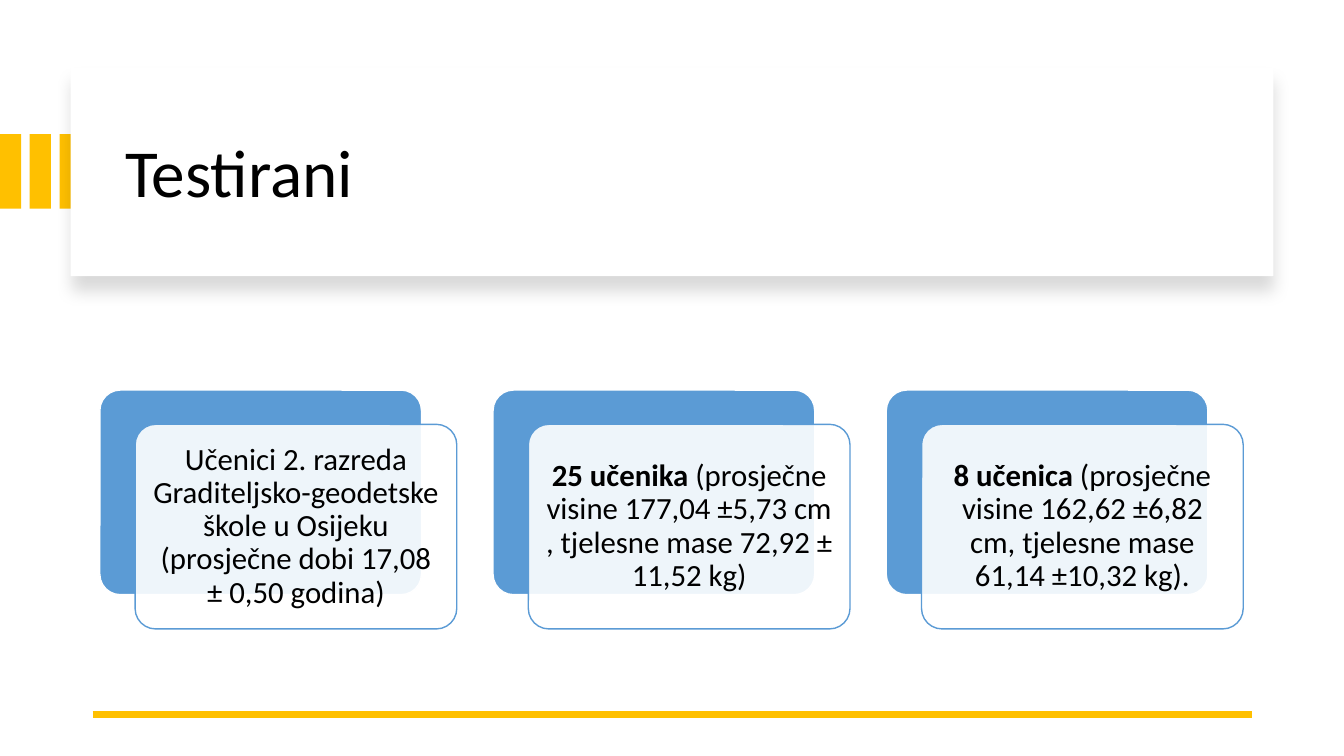
from lxml import etree
from pptx import Presentation
from pptx.dml.color import RGBColor
from pptx.enum import shapes, text
from pptx.oxml import ns, parse_xml
from pptx.util import Inches, Pt

GOLD = RGBColor(0xFF, 0xC0, 0x00)
BLUE = RGBColor(0x5B, 0x9B, 0xD5)
WHITE = RGBColor(0xFF, 0xFF, 0xFF)
BLACK = RGBColor(0x00, 0x00, 0x00)
FONT = "Calibri"

# Each card: bold lead, remaining wording
CARDS = [
    ("", "Učenici 2. razreda Graditeljsko-geodetske škole u Osijeku "
         "(prosječne dobi 17,08 ± 0,50 godina)"),
    ("25 učenika ", "(prosječne visine 177,04 ±5,73 cm , "
                    "tjelesne mase 72,92 ± 11,52 kg)"),
    ("8 učenica ", "(prosječne visine 162,62 ±6,82 cm, "
                   "tjelesne mase 61,14 ±10,32 kg)."),
]
CARD_LEFT, CARD_TOP, CARD_STEP = 0.99, 3.87, 3.9
CARD_WIDTH, CARD_HEIGHT = 3.19, 2.03
CARD_OFFSET_X, CARD_OFFSET_Y = 0.35, 0.34

SHADOW = (
    f'<a:effectLst {ns.nsdecls("a")}>'
    '<a:outerShdw blurRad="139700" dist="127000" dir="5400000" algn="t" rotWithShape="0">'
    '<a:srgbClr val="000000"><a:alpha val="15000"/></a:srgbClr>'
    '</a:outerShdw></a:effectLst>'
)


def add_box(slide, kind, left, top, width, height, fill, line=None):
    shape = slide.shapes.add_shape(
        kind, Inches(left), Inches(top), Inches(width), Inches(height))
    shape.shadow.inherit = False
    shape.fill.solid()
    shape.fill.fore_color.rgb = fill
    if line is None:
        shape.line.fill.background()
    else:
        shape.line.color.rgb = line
        shape.line.width = Pt(1)
    return shape


def add_card_layer(slide, left, top, fill, line):
    shape = add_box(slide, shapes.MSO_SHAPE.ROUNDED_RECTANGLE,
                    left, top, CARD_WIDTH, CARD_HEIGHT, fill, line)
    shape.adjustments[0] = 0.1
    return shape


def set_opacity(shape, percent):
    color = shape.fill._xPr.find(".//" + ns.qn("a:srgbClr"))
    etree.SubElement(color, ns.qn("a:alpha")).set("val", str(percent * 1000))


def format_paragraph(paragraph, size, alignment):
    paragraph.alignment = alignment
    paragraph.line_spacing = 0.9
    paragraph.font.name = FONT
    paragraph.font.size = Pt(size)
    paragraph.font.color.rgb = BLACK


def add_card(slide, left, lead, wording):
    add_card_layer(slide, left, CARD_TOP, BLUE, WHITE)
    front = add_card_layer(slide, left + CARD_OFFSET_X, CARD_TOP + CARD_OFFSET_Y,
                           WHITE, BLUE)
    set_opacity(front, 90)
    frame = front.text_frame
    frame.word_wrap = True
    frame.vertical_anchor = text.MSO_ANCHOR.MIDDLE
    frame.margin_left = frame.margin_right = Inches(0.09)
    frame.margin_top = frame.margin_bottom = Inches(0.09)
    paragraph = frame.paragraphs[0]
    format_paragraph(paragraph, 22, text.PP_ALIGN.CENTER)
    if lead:
        run = paragraph.add_run()
        run.text = lead
        run.font.bold = True
    paragraph.add_run().text = wording


def add_title(slide, wording):
    title = slide.shapes.title
    title.left, title.top = Inches(1.14), Inches(0.89)
    title.width, title.height = Inches(11.13), Inches(1.7)
    title.text_frame.text = wording
    title.text_frame.vertical_anchor = text.MSO_ANCHOR.MIDDLE
    format_paragraph(title.text_frame.paragraphs[0], 48, text.PP_ALIGN.LEFT)
    # Bring the title in front of its panel
    slide.shapes._spTree.append(title._element)


def add_rule(slide, left, right, y):
    rule = slide.shapes.add_connector(
        shapes.MSO_CONNECTOR.STRAIGHT, Inches(left), Inches(y), Inches(right), Inches(y))
    rule.line.color.rgb = GOLD
    rule.line.width = Pt(4.5)
    etree.SubElement(rule._element.spPr, ns.qn("a:effectLst"))


def main():
    presentation = Presentation()
    presentation.slide_width, presentation.slide_height = Inches(13.33), Inches(7.5)
    slide = presentation.slides.add_slide(presentation.slide_layouts[5])

    # Gold bars at the left edge
    rectangle = shapes.MSO_SHAPE.RECTANGLE
    for index in range(3):
        add_box(slide, rectangle, index * 0.295, 1.33, 0.21, 0.74, GOLD)

    # Title on a raised panel
    panel = add_box(slide, rectangle, 0.7, 0.67, 11.93, 2.07, WHITE)
    properties = panel._element.spPr
    properties.replace(properties.find(ns.qn("a:effectLst")), parse_xml(SHADOW))
    add_title(slide, "Testirani")

    # Bottom rule and the cards
    add_rule(slide, 0.92, 12.42, 7.09)
    for index, (lead, wording) in enumerate(CARDS):
        add_card(slide, CARD_LEFT + index * CARD_STEP, lead, wording)

    presentation.save("out.pptx")


if __name__ == "__main__":
    main()
